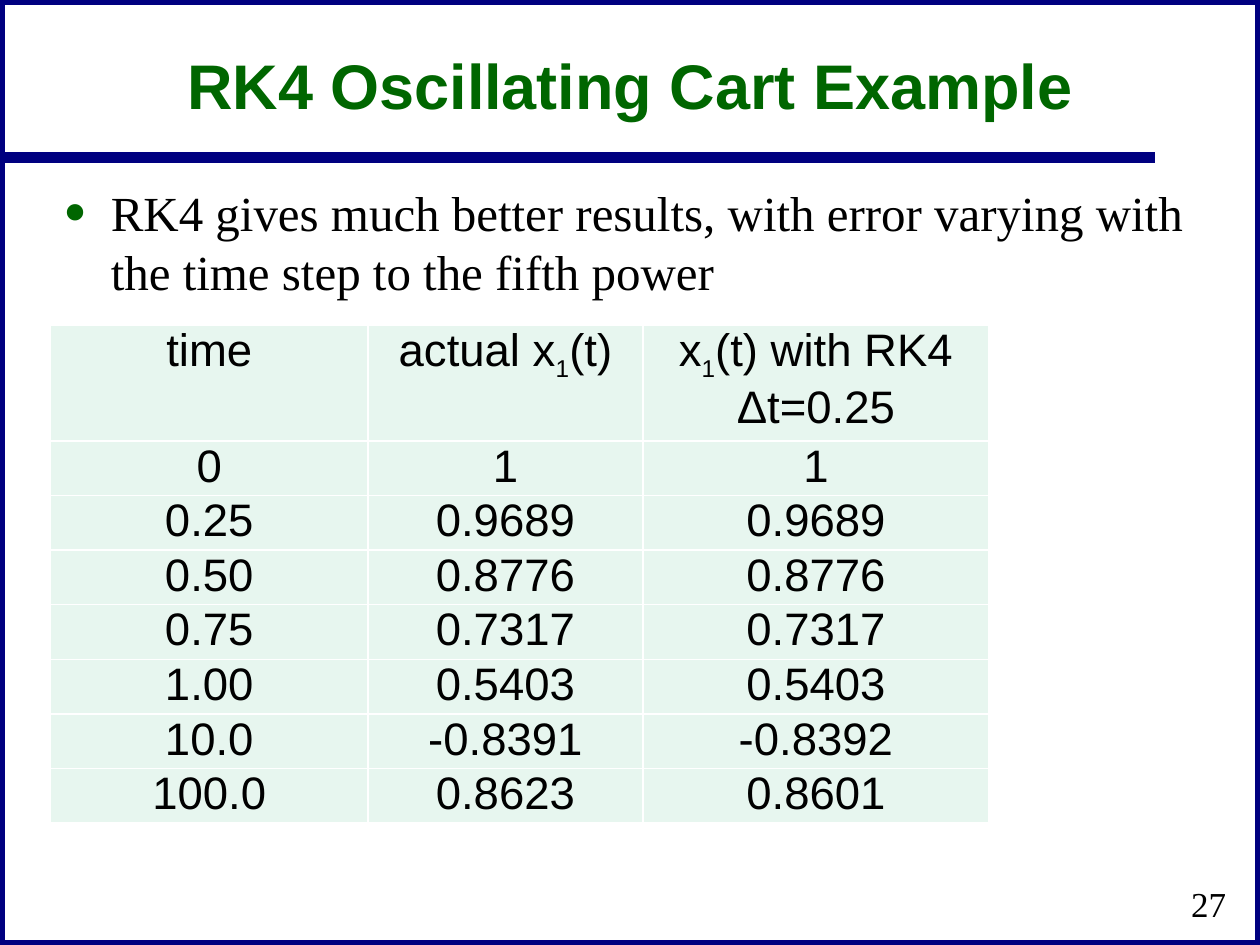
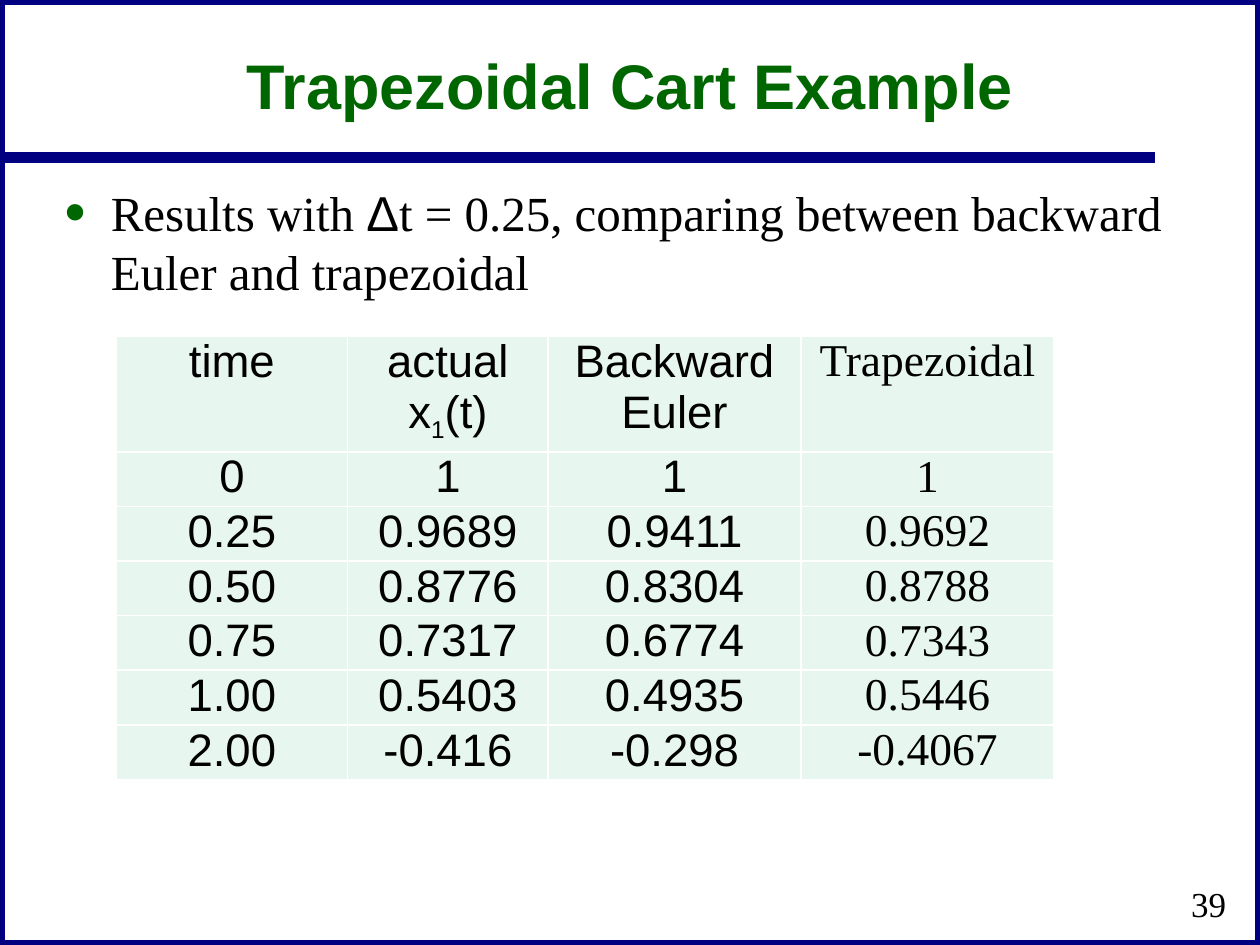
"""Build two slides comparing numerical integration of an oscillating cart."""

from collections.abc import Iterable
from dataclasses import dataclass
from typing import Any, NamedTuple

import pptx
import pptx.dml.color
import pptx.enum.dml
import pptx.enum.shapes
import pptx.enum.text
import pptx.oxml
import pptx.oxml.ns
import pptx.util
from lxml import etree

RGBColor = pptx.dml.color.RGBColor
Cm = pptx.util.Cm
Pt = pptx.util.Pt
PP_ALIGN = pptx.enum.text.PP_ALIGN
MSO_ANCHOR = pptx.enum.text.MSO_ANCHOR
qn = pptx.oxml.ns.qn

NAVY = RGBColor(0x00, 0x00, 0x80)
GREEN = RGBColor(0x00, 0x66, 0x00)
MINT = RGBColor(0xE7, 0xF6, 0xEF)
WHITE = RGBColor(0xFF, 0xFF, 0xFF)
BLACK = RGBColor(0x00, 0x00, 0x00)

SANS = "Arial"
SERIF = "Times New Roman"

SLIDE_W, SLIDE_H = Cm(25.4), Cm(19.05)
BAND_Y, BAND_END = Cm(3.18), Cm(23.29)
RULE_WIDTH = Pt(6)
HEADER_H, ROW_H = Cm(2.16), Cm(1.02)

TITLE_FONT = {"name": SANS, "size": Pt(36), "bold": True}
BODY_FONT = {"name": SERIF, "size": Pt(28)}
NUMBER_FONT = {"name": SERIF, "size": Pt(20)}
CELL_FONT = {"name": SANS, "size": Pt(26)}
SUBSCRIPT_SIZE = Pt(24)
SUBSCRIPT_MARK = "~"
CELL_MARGINS = {"margin_left": Cm(0.18), "margin_right": Cm(0.18),
                "margin_top": Cm(0), "margin_bottom": Cm(0)}


class Box(NamedTuple):
    """Position and size of a shape."""

    left: int
    top: int
    width: int
    height: int


class Run(NamedTuple):
    """A piece of text with its font."""

    text: str
    font: str = SERIF


@dataclass(frozen=True)
class ResultTable:
    """Results over time, one typeface per column."""

    left: int
    top: int
    widths: tuple[int, ...]
    fonts: tuple[str, ...]
    rows: tuple[tuple[str, ...], ...]


@dataclass(frozen=True)
class ExampleSlide:
    """One example with its statement and results."""

    title: str
    body: tuple[Run, ...]
    body_height: int
    number: int
    table: ResultTable


TITLE_BOX = Box(Cm(1.9), Cm(0.64), Cm(21.6), Cm(2.1))
NUMBER_BOX = Box(Cm(19.69), Cm(17.58), Cm(5.28), Cm(1.27))

EXAMPLES = (
    ExampleSlide(
        "RK4 Oscillating Cart Example",
        (Run("RK4 gives much better results, with error varying with "
             "the time step to the fifth power"),),
        Cm(2.41),
        27,
        ResultTable(
            Cm(1.02), Cm(6.56), (Cm(6.4), Cm(5.54), Cm(6.98)), (SANS,) * 3,
            (
                ("time", "actual x~1~(t)", "x~1~(t) with RK4\nΔt=0.25"),
                ("0", "1", "1"),
                ("0.25", "0.9689", "0.9689"),
                ("0.50", "0.8776", "0.8776"),
                ("0.75", "0.7317", "0.7317"),
                ("1.00", "0.5403", "0.5403"),
                ("10.0", "-0.8391", "-0.8392"),
                ("100.0", "0.8623", "0.8601"),
            ),
        ),
    ),
    ExampleSlide(
        "Trapezoidal Cart Example",
        (Run("Results with "), Run("Δ", SANS),
         Run("t = 0.25, comparing between backward Euler and trapezoidal")),
        Cm(3),
        39,
        ResultTable(
            Cm(2.34), Cm(6.78), (Cm(4.67), Cm(4.04), Cm(5.1), Cm(5.1)),
            (SANS,) * 3 + (SERIF,),
            (
                ("time", "actual x~1~(t)", "Backward Euler", "Trapezoidal"),
                ("0", "1", "1", "1"),
                ("0.25", "0.9689", "0.9411", "0.9692"),
                ("0.50", "0.8776", "0.8304", "0.8788"),
                ("0.75", "0.7317", "0.6774", "0.7343"),
                ("1.00", "0.5403", "0.4935", "0.5446"),
                ("2.00", "-0.416", "-0.298", "-0.4067"),
            ),
        ),
    ),
)


def apply(target: Any, values: dict[str, Any]) -> None:
    """Set every attribute in values on target."""
    for name, value in values.items():
        setattr(target, name, value)


def add_run(p: Any, text: str, font: dict[str, Any], color: RGBColor = BLACK) -> Any:
    """Append formatted text to a paragraph."""
    r = p.add_run()
    r.text = text
    apply(r.font, font)
    r.font.color.rgb = color
    return r


def draw_frame(s: Any) -> None:
    """Draw the border and the band below the title."""
    sp = s.shapes.add_shape(pptx.enum.shapes.MSO_SHAPE.RECTANGLE, 0, 0, SLIDE_W, SLIDE_H)
    sp.shadow.inherit = False
    sp.fill.background()
    band = s.shapes.add_connector(
        pptx.enum.shapes.MSO_CONNECTOR.STRAIGHT, 0, BAND_Y, BAND_END, BAND_Y)
    for line in (sp.line, band.line):
        line.color.rgb = NAVY
        line.width = RULE_WIDTH
    etree.SubElement(band._element.spPr, qn("a:effectLst"))


def fill_title(s: Any, text: str) -> None:
    """Place and format the title."""
    sp = s.shapes.title
    apply(sp, TITLE_BOX._asdict())
    tf = sp.text_frame
    apply(tf, {"vertical_anchor": MSO_ANCHOR.MIDDLE, "word_wrap": True,
               "auto_size": pptx.enum.text.MSO_AUTO_SIZE.NONE})
    p = tf.paragraphs[0]
    p.alignment = PP_ALIGN.CENTER
    add_run(p, text, TITLE_FONT, GREEN)


def add_bullet(p: Any) -> None:
    """Give a paragraph a large green bullet and hanging indent."""
    ppr = p._p.get_or_add_pPr()
    ppr.set("marL", str(Cm(0.96)))
    ppr.set("indent", str(Cm(-0.96)))
    color = etree.SubElement(ppr, qn("a:buClr"))
    etree.SubElement(color, qn("a:srgbClr"), val=str(GREEN))
    etree.SubElement(ppr, qn("a:buSzPct"), val="140000")
    etree.SubElement(ppr, qn("a:buFont"), typeface=SERIF)
    etree.SubElement(ppr, qn("a:buChar"), char="•")


def fill_body(s: Any, runs: Iterable[Run], height: int) -> None:
    """Place the statement in the body placeholder."""
    sp = s.placeholders[1]
    apply(sp, Box(Cm(1.02), Cm(3.56), Cm(23.72), height)._asdict())
    tf = sp.text_frame
    apply(tf, {"word_wrap": True, "auto_size": pptx.enum.text.MSO_AUTO_SIZE.NONE})
    p = tf.paragraphs[0]
    add_bullet(p)
    p.space_before = Pt(0)
    for run in runs:
        add_run(p, run.text, BODY_FONT | {"name": run.font})


def add_number(s: Any, number: int) -> None:
    """Write the slide number at the lower right."""
    tf = s.shapes.add_textbox(*NUMBER_BOX).text_frame
    apply(tf, {"word_wrap": True, "vertical_anchor": MSO_ANCHOR.MIDDLE})
    p = tf.paragraphs[0]
    p.alignment = PP_ALIGN.RIGHT
    add_run(p, str(number), NUMBER_FONT)


def fill_cell(cell: Any, text: str, font: str) -> None:
    """Write a cell, with marked parts as subscripts, and format it."""
    apply(cell, CELL_MARGINS)
    tcpr = cell._tc.get_or_add_tcPr()
    for side in ("lnL", "lnR", "lnT", "lnB"):
        ln = etree.SubElement(tcpr, qn(f"a:{side}"), w=str(Pt(1)))
        fill = etree.SubElement(ln, qn("a:solidFill"))
        etree.SubElement(fill, qn("a:srgbClr"), val=str(WHITE))
    cell.fill.solid()
    cell.fill.fore_color.rgb = MINT
    tf = cell.text_frame
    for i, line in enumerate(text.split("\n")):
        p = tf.add_paragraph() if i else tf.paragraphs[0]
        p.alignment = PP_ALIGN.CENTER
        for j, part in enumerate(line.split(SUBSCRIPT_MARK)):
            r = add_run(p, part, CELL_FONT | {"name": font})
            if j % 2:
                r.font.size = SUBSCRIPT_SIZE
                r._r.get_or_add_rPr().set("baseline", "-25000")


def add_results(s: Any, spec_table: ResultTable) -> None:
    """Draw a table of results."""
    rows, widths = spec_table.rows, spec_table.widths
    height = HEADER_H + ROW_H * (len(rows) - 1)
    table = s.shapes.add_table(
        len(rows), len(widths), spec_table.left, spec_table.top, sum(widths), height).table
    apply(table, {"first_row": False, "horz_banding": False})
    for column, width in zip(table.columns, widths):
        column.width = width
    for i, values in enumerate(rows):
        table.rows[i].height = ROW_H if i else HEADER_H
        for j, (text, font) in enumerate(zip(values, spec_table.fonts)):
            fill_cell(table.cell(i, j), text, font)


def main() -> None:
    """Build and save the presentation."""
    prs = pptx.Presentation()
    apply(prs, {"slide_width": SLIDE_W, "slide_height": SLIDE_H})
    for example in EXAMPLES:
        s = prs.slides.add_slide(prs.slide_layouts[1])
        draw_frame(s)
        fill_title(s, example.title)
        fill_body(s, example.body, example.body_height)
        add_number(s, example.number)
        add_results(s, example.table)
    prs.save("out.pptx")


if __name__ == "__main__":
    main()
